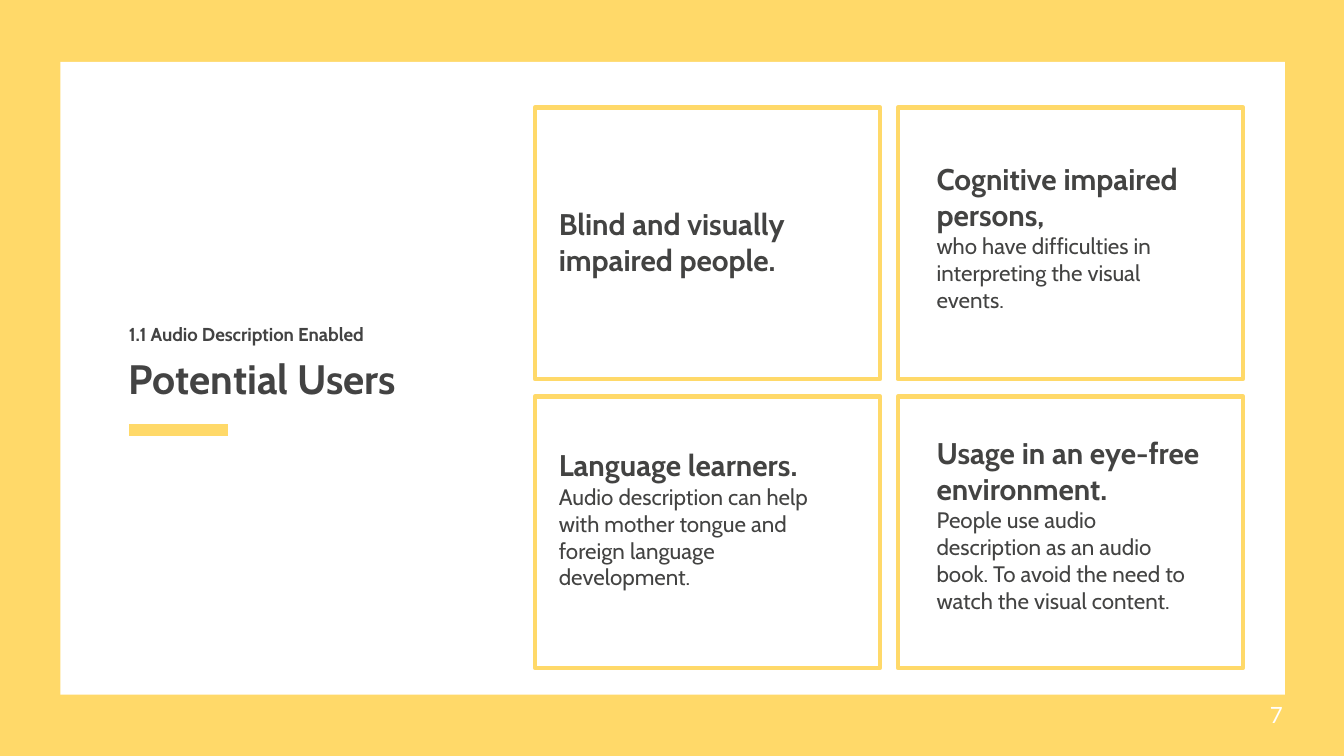
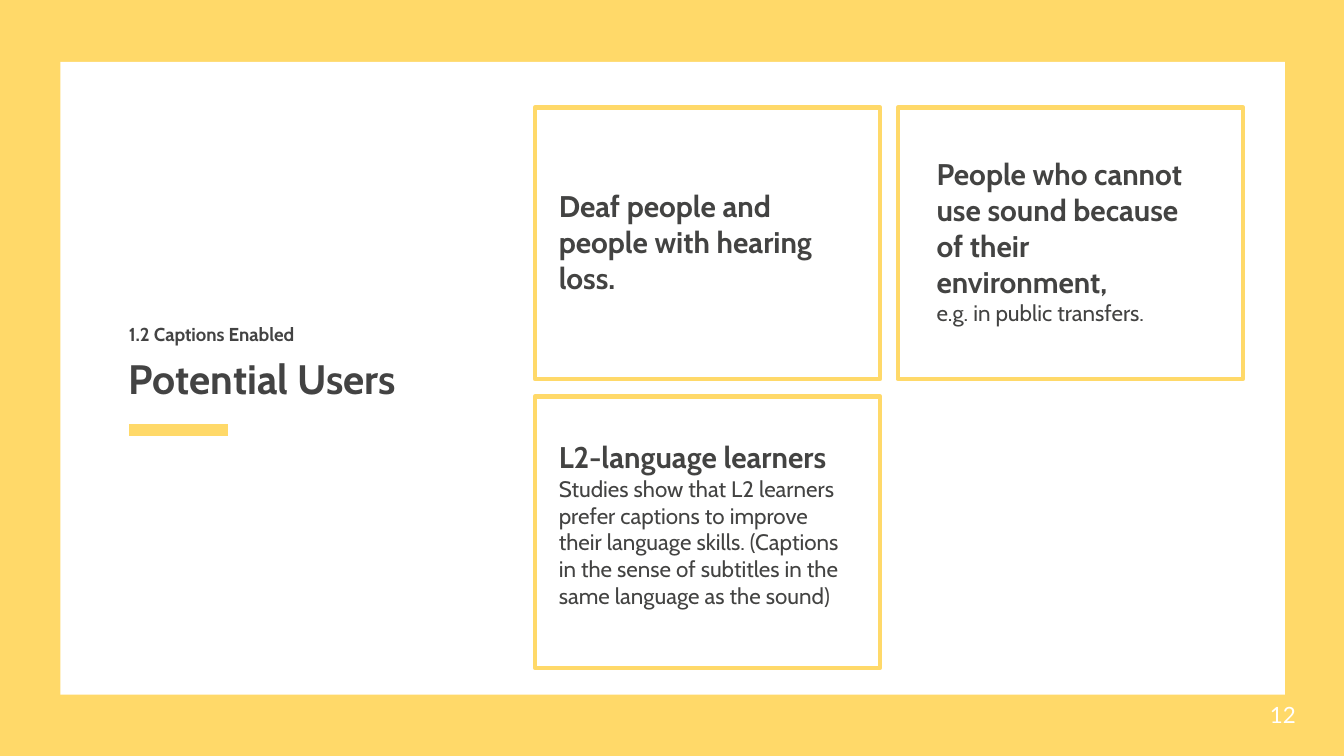
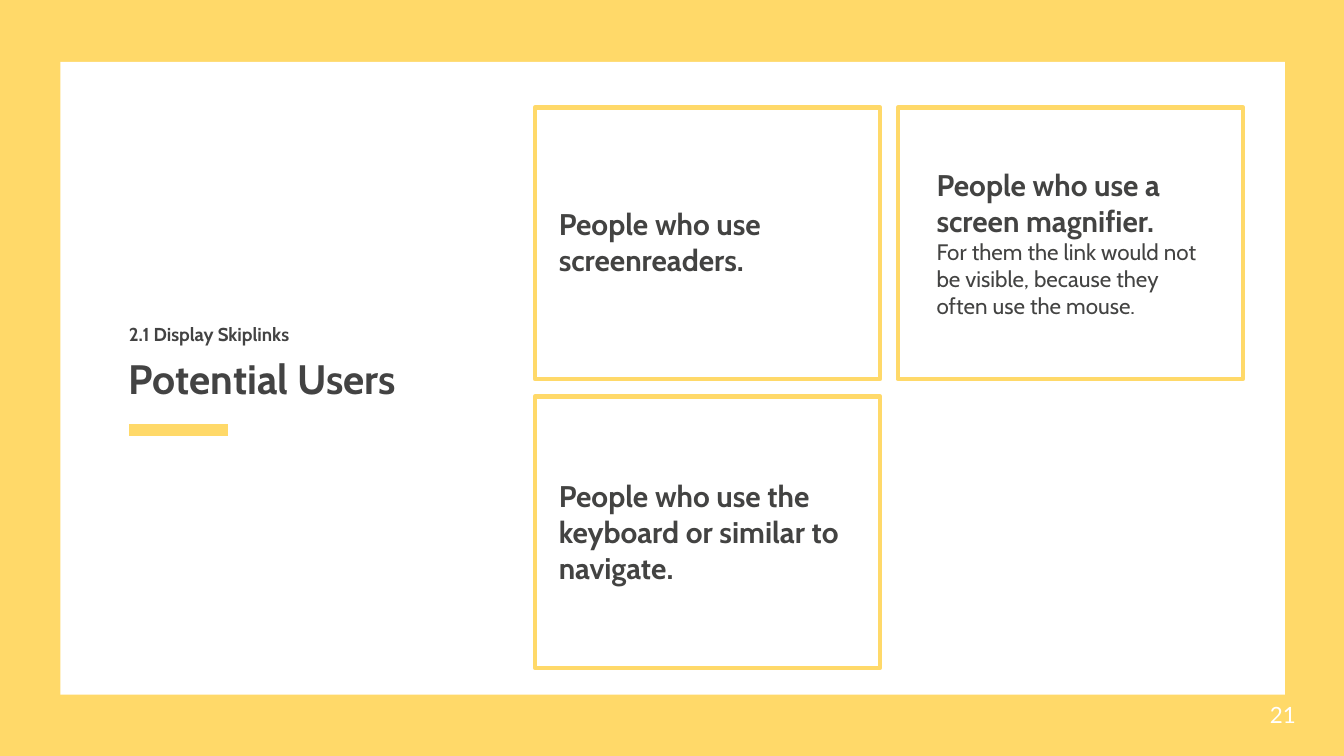
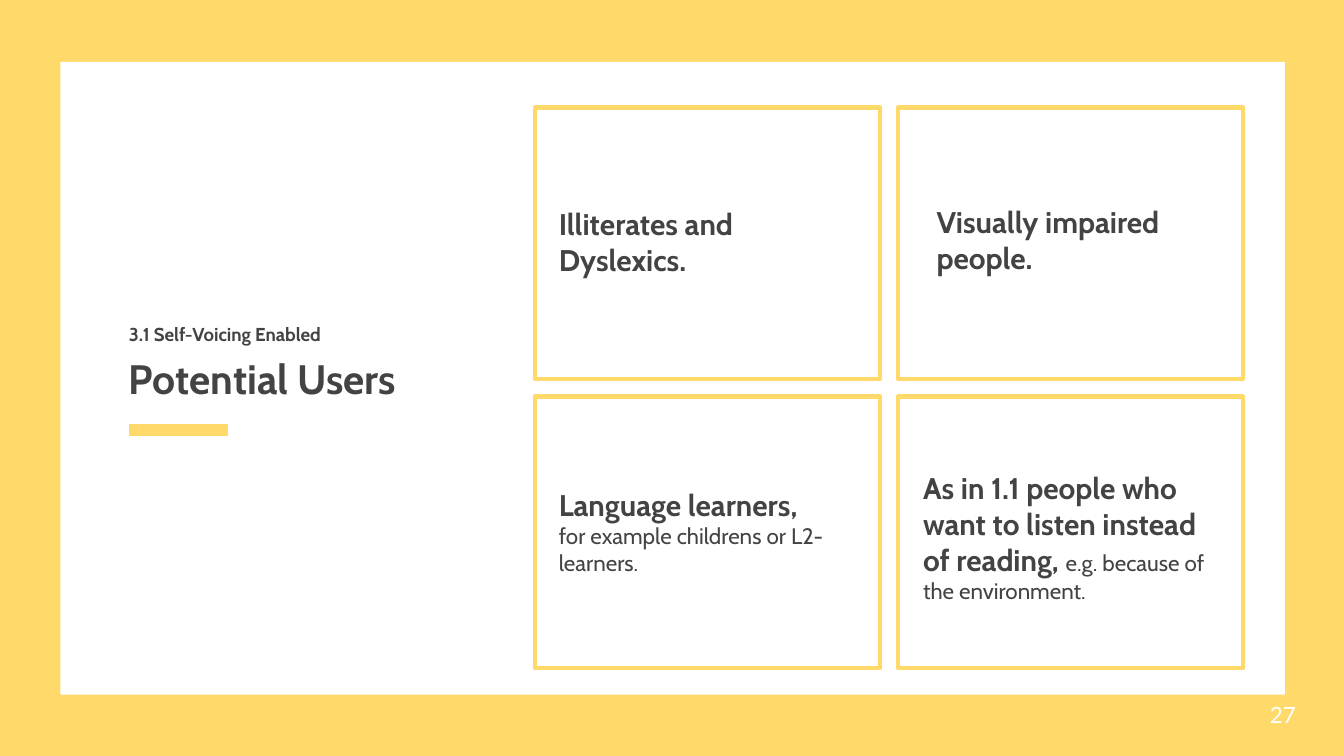
from dataclasses import dataclass

from lxml.etree import SubElement
from pptx import Presentation
from pptx.dml.color import RGBColor as RGB
from pptx.enum.shapes import MSO_CONNECTOR as Connector, MSO_SHAPE as Shape
from pptx.enum.text import MSO_ANCHOR as Anchor
from pptx.oxml.ns import qn
from pptx.util import Inches, Pt


@dataclass(frozen=True)
class Theme:
    accent: RGB = RGB(0xFF, 0xD9, 0x69)
    paper: RGB = RGB(0xFF, 0xFF, 0xFF)
    ink: RGB = RGB(0x43, 0x43, 0x43)
    card_ink: RGB = RGB(0x43, 0x43, 0x42)
    font: str = "Cabin"
    number_font: str = "Lato"
    title: int = 22
    heading: int = 16
    body: int = 12
    topic: int = 10
    frame_width: float = 2.25
    rule_width: float = 6


# Slide size (16:9) and card grid, in inches
SLIDE_WIDTH = 10
SLIDE_HEIGHT = SLIDE_WIDTH * 9 / 16
GRID_LEFT, GRID_TOP = 3.98, 0.8
CARD_WIDTH, CARD_HEIGHT, CARD_GAP = 2.57, 2.02, 0.13
PADDING = 0.1
LINE_BELOW = 0.2  # extra bottom inset that lifts centred text


def apply(target, values):
    for name, value in values.items():
        setattr(target, name, value)


class Deck:
    def __init__(self, theme):
        self.theme = theme
        self.deck = Presentation()
        apply(self.deck, {"slide_width": Inches(SLIDE_WIDTH),
                          "slide_height": Inches(SLIDE_HEIGHT)})
        self.slide = None

    def font(self, size, color, bold=True, name=None):
        return {"size": Pt(size), "bold": bold, "name": name or self.theme.font,
                "color": color}

    def rect(self, box, fill=None, line=None):
        shape = self.slide.shapes.add_shape(Shape.RECTANGLE, *map(Inches, box))
        shape.shadow.inherit = False
        if fill is None:
            shape.fill.background()
        else:
            shape.fill.solid()
            shape.fill.fore_color.rgb = fill
        if line is None:
            shape.line.fill.background()
        else:
            shape.line.color.rgb = line
            shape.line.width = Pt(self.theme.frame_width)

    def rule(self, start, end):
        rule = self.slide.shapes.add_connector(
            Connector.STRAIGHT, *map(Inches, start + end))
        rule.line.color.rgb = self.theme.accent
        rule.line.width = Pt(self.theme.rule_width)
        SubElement(rule._element.spPr, qn("a:effectLst"))

    def text(self, box, paragraphs, anchor=Anchor.MIDDLE, spacing=None, below=0):
        """Each paragraph is a list of (wording, font values) runs."""
        frame = self.slide.shapes.add_textbox(*map(Inches, box)).text_frame
        apply(frame, {
            "word_wrap": True, "vertical_anchor": anchor,
            "margin_left": Inches(PADDING), "margin_right": Inches(PADDING),
            "margin_top": Inches(PADDING), "margin_bottom": Inches(PADDING + below)})
        for index, runs in enumerate(paragraphs):
            paragraph = frame.add_paragraph() if index else frame.paragraphs[0]
            paragraph.line_spacing = spacing
            for wording, values in runs:
                run = paragraph.add_run()
                run.text = wording
                apply(run.font, {k: v for k, v in values.items() if k != "color"})
                run.font.color.rgb = values["color"]

    def page(self, number, topic):
        """Start a slide with the shared background, title and number."""
        theme = self.theme
        self.slide = self.deck.slides.add_slide(self.deck.slide_layouts[6])
        background = self.slide.background.fill
        background.solid()
        background.fore_color.rgb = theme.accent
        self.rect((0.45, 0.46, 9.11, 4.71), fill=theme.paper)
        self.rule((0.96, 3.2), (1.7, 3.2))
        self.text((0.86, 1.9, 2.78, 1.82),
                  [[("Potential Users", self.font(theme.title, theme.ink))]])
        self.text((0.86, 2.28, 3.69, 0.37),
                  [[(topic, self.font(theme.topic, theme.ink))]],
                  anchor=Anchor.TOP, spacing=1.15)
        self.text((9.35, 5.1, 0.6, 0.43),
                  [[(str(number), self.font(theme.body, theme.paper, False,
                                            theme.number_font))]])

    def card(self, index, box, heading, detail=None, inline=False, **layout):
        """Frame at a grid position, with a heading and optional detail."""
        theme = self.theme
        row, column = divmod(index, 2)
        self.rect((GRID_LEFT + column * (CARD_WIDTH + CARD_GAP),
                   GRID_TOP + row * (CARD_HEIGHT + CARD_GAP),
                   CARD_WIDTH, CARD_HEIGHT), line=theme.accent)
        paragraphs = [[(heading, self.font(theme.heading, theme.card_ink))]]
        if detail:
            run = (detail, self.font(theme.body, theme.card_ink, False))
            if inline:
                paragraphs[0].append(run)
            else:
                paragraphs.append([run])
        self.text(box, paragraphs, **layout)


# Text areas of the cards
FIRST = (4.06, 1.18, 2.37, 1.24)
SECOND = (6.87, 1.14, 2.18, 1.24)
THIRD = (4.06, 3.28, 2.3, 1.55)
FOURTH = (6.87, 3.28, 2.18, 1.24)

# Slide number, topic, and cards in reading order
PAGES = [
    (7, "1.1 Audio Description Enabled", [
        dict(box=FIRST, heading="Blind and visually impaired people."),
        dict(box=SECOND, heading="Cognitive impaired persons,",
             detail="who have difficulties in interpreting the visual events."),
        dict(box=(4.06, 3.28, 2.3, 1.36), heading="Language learners.",
             detail="Audio description can help with mother tongue and "
                    "foreign language development.", below=LINE_BELOW),
        dict(box=FOURTH, heading="Usage in an eye-free environment.",
             detail="People use audio description as an audio book. "
                    "To avoid the need to watch the visual content."),
    ]),
    (12, "1.2 Captions Enabled", [
        dict(box=FIRST, heading="Deaf people and people with hearing loss."),
        dict(box=(6.87, 0.96, 2.18, 1.67),
             heading="People who cannot use sound because of their environment,",
             detail="e.g. in public transfers."),
        dict(box=(4.06, 3.03, 2.3, 1.94), heading="L2-language learners",
             detail="Studies show that L2 learners prefer captions to improve "
                    "their language skills. (Captions in the sense of subtitles "
                    "in the same language as the sound)", below=LINE_BELOW),
    ]),
    (21, "2.1 Display Skiplinks", [
        dict(box=FIRST, heading="People who use screenreaders."),
        dict(box=SECOND, heading="People who use a screen magnifier.",
             detail="For them the link would not be visible, because they "
                    "often use the mouse.", anchor=Anchor.TOP),
        dict(box=THIRD, below=LINE_BELOW,
             heading="People who use the keyboard or similar to navigate."),
    ]),
    (27, "3.1 Self-Voicing Enabled", [
        dict(box=FIRST, heading="Illiterates and Dyslexics."),
        dict(box=(6.87, 1.18, 2.18, 1.2), heading="Visually impaired people."),
        dict(box=THIRD, heading="Language learners,",
             detail="for example childrens or L2-learners.", below=LINE_BELOW),
        dict(box=(6.77, 3.16, 2.3, 1.67), inline=True,
             heading="As in 1.1 people who want to listen instead of reading, ",
             detail="e.g. because of the environment."),
    ]),
]


def main():
    users = Deck(Theme())
    for number, topic, cards in PAGES:
        users.page(number, topic)
        for index, card in enumerate(cards):
            users.card(index, **card)
    users.deck.save("out.pptx")


if __name__ == "__main__":
    main()
